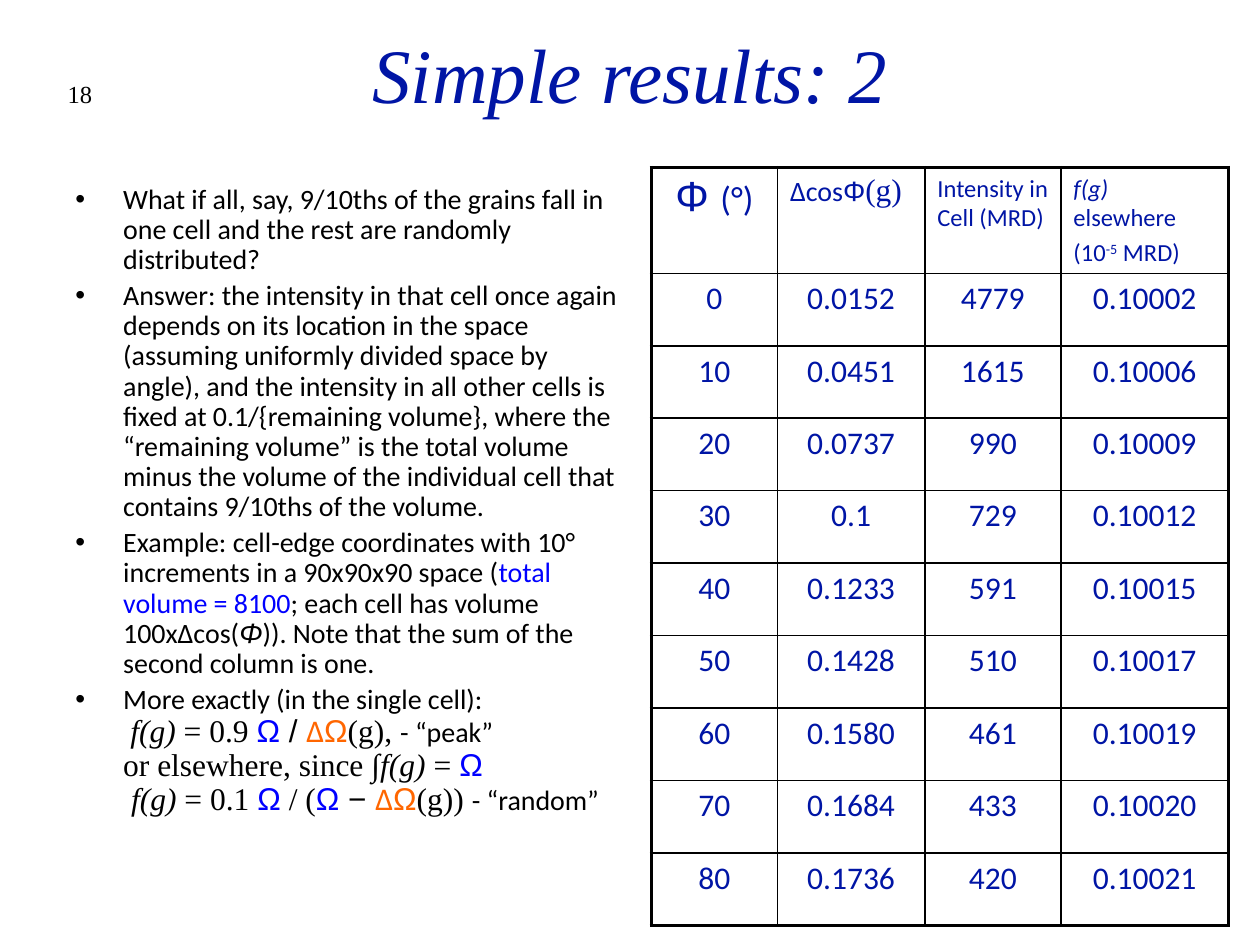
from typing import NamedTuple

from lxml import etree
from pptx import Presentation
from pptx.dml.color import RGBColor
from pptx.enum.text import MSO_ANCHOR, PP_ALIGN
from pptx.oxml.ns import qn
from pptx.util import Inches, Pt

LEFT, CENTER, RIGHT = PP_ALIGN.LEFT, PP_ALIGN.CENTER, PP_ALIGN.RIGHT
MIDDLE = MSO_ANCHOR.MIDDLE
SANS, SERIF, GREEK = "Calibri", "Times New Roman", "Arial"
BLACK, NAVY, BLUE, ORANGE = "000000", "0015A5", "0000FF", "FF6600"
THICK, THIN = 2.25, 1


class Run(NamedTuple):
    text: str
    size: float = 16
    font: str = SANS
    color: str = BLACK
    italic: bool = False
    raised: bool = False


class Box(NamedTuple):
    left: float
    top: float
    width: float
    height: float


def rgb(code: str) -> RGBColor:
    return RGBColor.from_string(code)


def lengths(box: Box) -> list:
    return [Inches(side) for side in box]


def add_run(para, item: Run) -> None:
    """Add the text of one run, with a line break at each newline."""
    for i, part in enumerate(item.text.split("\n")):
        if i:
            para.add_line_break()
        if not part:
            continue
        run = para.add_run()
        run.text = part
        font = run.font
        font.size, font.name, font.italic = Pt(item.size), item.font, item.italic
        font.color.rgb = rgb(item.color)
        if item.raised:
            run._r.get_or_add_rPr().set("baseline", "30000")


def write(frame, paras: list, align=LEFT, gap: float = 0) -> None:
    """Fill a text frame; gap is the space before, as a share of the text size."""
    frame.word_wrap = True
    for i, runs in enumerate(paras):
        para = frame.add_paragraph() if i else frame.paragraphs[0]
        para.alignment = align
        para.space_before = Pt(gap * runs[0].size)
        for item in runs:
            add_run(para, item)


def add_bullet(para, indent: float) -> None:
    para.line_spacing = 0.9
    props = para._p.get_or_add_pPr()
    props.set("marL", str(Inches(indent)))
    props.set("indent", str(-Inches(indent)))
    etree.SubElement(props, qn("a:buFont")).set("typeface", GREEK)
    etree.SubElement(props, qn("a:buChar")).set("char", "•")


def add_edge(cell, side: str, width: float) -> None:
    line = etree.SubElement(cell._tc.get_or_add_tcPr(), qn("a:ln" + side))
    line.set("w", str(Pt(width)))
    fill = etree.SubElement(line, qn("a:solidFill"))
    etree.SubElement(fill, qn("a:srgbClr")).set("val", BLACK)


def add_grid(slide, box: Box, widths: list, head: list, data: list) -> None:
    rows, cols = len(data) + 1, len(widths)
    table = slide.shapes.add_table(rows, cols, *lengths(box)).table
    table.first_row = table.horz_banding = False
    for col, width in zip(table.columns, widths):
        col.width = Inches(width)
    for r in range(rows):
        for c in range(cols):
            cell = table.cell(r, c)
            outer = {"L": c == 0, "R": c == cols - 1, "T": r == 0, "B": r == rows - 1}
            for side, edge in outer.items():
                add_edge(cell, side, THICK if edge else THIN)
            cell.fill.background()
            paras = [[Run(data[r - 1][c], 18, color=NAVY)]] if r else head[c]
            write(cell.text_frame, paras, CENTER if r or c == 0 else LEFT, 0.2)


def math(text: str, italic: bool = False) -> Run:
    return Run(text, 18, SERIF, italic=italic)


def label(text: str, size: float = 14, font: str = SANS, **style) -> Run:
    return Run(text, size, font, NAVY, **style)


FUNC = math("f(g)", True)
OMEGA = Run("Ω", 18, GREEK, BLUE)
DELTA = [Run("∆", 18, SANS, ORANGE), Run("Ω", 18, GREEK, ORANGE)]

POINTS = [
    [Run("What if all, say, 9/10ths of the grains fall in one cell and the rest "
         "are randomly distributed?")],
    [Run("Answer: the intensity in that cell once again depends on its location in "
         "the space (assuming uniformly divided space by angle), and the intensity "
         "in all other cells is fixed at 0.1/{remaining volume}, where the "
         "“remaining volume” is the total volume minus the volume of the individual "
         "cell that contains 9/10ths of the volume.")],
    [Run("Example: cell-edge coordinates with 10° increments in a 90x90x90 space ("),
     Run("total volume = 8100", color=BLUE),
     Run("; each cell has volume 100x∆cos("),
     Run("Φ", font=GREEK, italic=True),
     Run(")). Note that the sum of the second column is one.")],
    [Run("More exactly (in the single cell):\n"), Run(" ", 18),
     FUNC, math(" = 0.9 "), OMEGA, Run(" / ", 18, GREEK), *DELTA,
     math("(g), "), Run("- “peak”\n"),
     math("or elsewhere, since ∫"), FUNC, math(" = "), OMEGA, math("\n "),
     FUNC, math(" = 0.1 "), OMEGA, math(" / ("), OMEGA, Run(" − ", 18, GREEK),
     *DELTA, math("(g)) "), Run("- “random”")],
]

HEAD = [
    [[label("Φ ", 24, GREEK), label("(°)", 20)]],
    [[label("∆cos", 16), label("Φ", 16, GREEK), label("(g)", 18, SERIF)]],
    [[label("Intensity in Cell (MRD)")]],
    [[label("f(g)", italic=True), label(" elsewhere")],
     [label("(10"), label("-5", raised=True), label(" MRD)")]],
]

DATA = [
    ("0", "0.0152", "4779", "0.10002"),
    ("10", "0.0451", "1615", "0.10006"),
    ("20", "0.0737", "990", "0.10009"),
    ("30", "0.1", "729", "0.10012"),
    ("40", "0.1233", "591", "0.10015"),
    ("50", "0.1428", "510", "0.10017"),
    ("60", "0.1580", "461", "0.10019"),
    ("70", "0.1684", "433", "0.10020"),
    ("80", "0.1736", "420", "0.10021"),
]


def main() -> None:
    deck = Presentation()
    deck.slide_width, deck.slide_height = Inches(10), Inches(7.5)
    slide = deck.slides.add_slide(deck.slide_layouts[5])

    title = slide.shapes.title
    title.left, title.top, title.width, title.height = lengths(Box(0.75, 0.08, 8.5, 1))
    title.text_frame.vertical_anchor = MIDDLE
    write(title.text_frame, [[Run("Simple results: 2", 44, SERIF, NAVY, True)]], CENTER)

    number = slide.shapes.add_textbox(*lengths(Box(0.25, 0.58, 0.58, 0.5)))
    write(number.text_frame, [[Run("18", 14, SERIF)]], RIGHT)

    body = slide.shapes.add_textbox(*lengths(Box(0.5, 1.42, 4.5, 5.5)))
    write(body.text_frame, POINTS, gap=0.2)
    for para in body.text_frame.paragraphs:
        add_bullet(para, 0.38)

    add_grid(slide, Box(5.17, 1.33, 4.58, 5.75), [1, 1.17, 1.08, 1.33], HEAD, DATA)
    deck.save("out.pptx")


if __name__ == "__main__":
    main()
